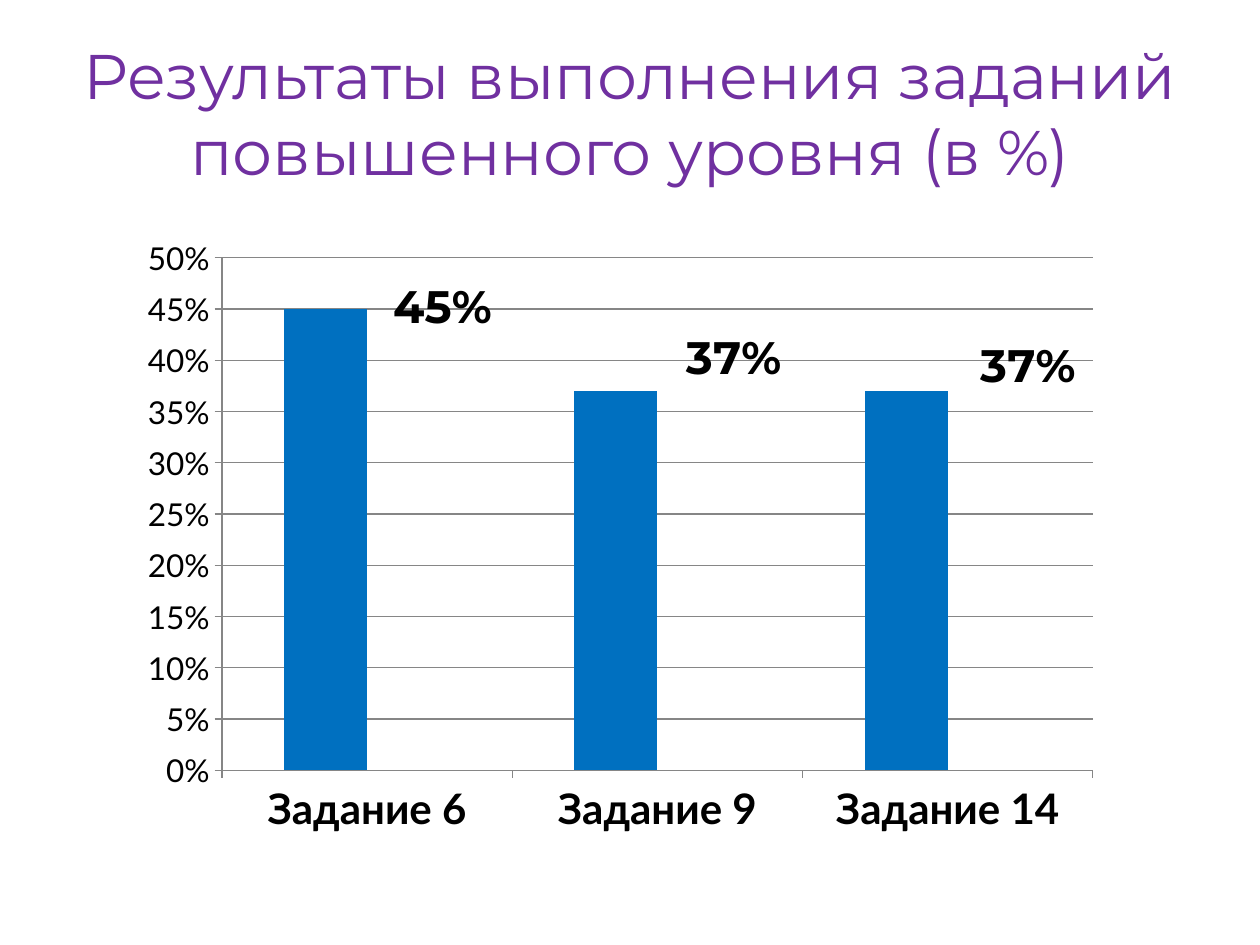
from typing import NamedTuple

from lxml import etree
from pptx import Presentation
from pptx.chart.data import CategoryChartData
from pptx.dml.color import RGBColor
from pptx.enum.chart import XL_CHART_TYPE, XL_LABEL_POSITION, XL_TICK_MARK
from pptx.enum.text import MSO_ANCHOR, PP_ALIGN
from pptx.oxml.ns import qn
from pptx.util import Inches, Pt

COLUMNS = XL_CHART_TYPE.COLUMN_CLUSTERED
OUTSIDE_END = XL_LABEL_POSITION.OUTSIDE_END
OUTSIDE = XL_TICK_MARK.OUTSIDE
MIDDLE = MSO_ANCHOR.MIDDLE
CENTER = PP_ALIGN.CENTER

PURPLE = RGBColor(0x70, 0x30, 0xA0)
BLUE = RGBColor(0x00, 0x70, 0xC0)
INDIGO = RGBColor(0x33, 0x33, 0xCC)
WHITE = RGBColor(0xFF, 0xFF, 0xFF)
GREY = RGBColor(0x86, 0x86, 0x86)
BLACK = RGBColor(0, 0, 0)
HEADING_FONT, CHART_FONT = "Montserrat", "Lato"

WIDTH, HEIGHT = Inches(10), Inches(7.5)


class Area(NamedTuple):
    """Place and size in percent of the slide."""
    left: float
    top: float
    width: float
    height: float

    def lengths(self) -> tuple[int, ...]:
        sides = (WIDTH, HEIGHT, WIDTH, HEIGHT)
        return tuple(round(share * side / 100) for share, side in zip(self, sides))


class Task(NamedTuple):
    """One task, its result and the shift of its label in percent of the chart."""
    name: str
    result: float
    shift_x: float
    shift_y: float


TITLE_AREA = Area(0, 3, 100, 17.8)
CHART_AREA = Area(10.2, 24, 78.1, 65.6)
TASKS = (
    Task("Задание 6", 0.45, 11.9, 5.1),
    Task("Задание 9", 0.37, 12, 0),
    Task("Задание 14", 0.37, 12.4, 1.3),
)


def style_font(font, name: str, size: int, color: RGBColor, bold: bool = False) -> None:
    font.name, font.size, font.bold = name, Pt(size), bold
    font.color.rgb = color


def make_layout(modes: dict[str, str], **percents: float):
    """Return a manual chart layout with lengths in percent of the chart."""
    layout = etree.Element(qn("c:layout"))
    manual = etree.SubElement(layout, qn("c:manualLayout"))
    shares = {tag: f"{percent / 100:.3f}" for tag, percent in percents.items()}
    for tag, value in (modes | shares).items():
        etree.SubElement(manual, qn(f"c:{tag}")).set("val", value)
    return layout


def add_title(page, text: str) -> None:
    box = page.shapes.add_textbox(*TITLE_AREA.lengths())
    frame = box.text_frame
    frame.word_wrap = True
    frame.vertical_anchor = MIDDLE
    para = frame.paragraphs[0]
    para.alignment = CENTER
    span = para.add_run()
    span.text = text
    style_font(span.font, HEADING_FONT, 36, PURPLE)


def style_axis(axis, size: int, bold: bool) -> None:
    style_font(axis.tick_labels.font, CHART_FONT, size, BLACK, bold)
    axis.major_tick_mark = OUTSIDE
    axis.format.line.color.rgb = GREY


def label_results(series) -> None:
    labels = series.data_labels
    labels.show_value = True
    labels.number_format, labels.number_format_is_linked = "0%", False
    style_font(labels.font, HEADING_FONT, 26, BLACK, True)
    for index in range(len(TASKS)):
        label = series.points[index].data_label
        style_font(label.font, HEADING_FONT, 26, BLACK, True)
        label.position = OUTSIDE_END
    # Move each label to the right of its column, without leader lines
    for task, node in zip(TASKS, series._element.iter(qn("c:dLbl"))):
        place = make_layout({}, x=task.shift_x, y=task.shift_y)
        node.find(qn("c:idx")).addnext(place)
    for leader in series._element.iter(qn("c:showLeaderLines")):
        leader.set("val", "0")


def add_results_chart(page) -> None:
    data = CategoryChartData(number_format="0%")
    data.categories = [task.name for task in TASKS]
    data.add_series("Series 1", [task.result for task in TASKS])
    data.add_series("Series 2", [None] * len(TASKS))
    data.add_series("Series 3", [])
    chart = page.shapes.add_chart(COLUMNS, *CHART_AREA.lengths(), data).chart
    chart.has_title = chart.has_legend = False
    style_font(chart.font, CHART_FONT, 18, BLACK)

    # Columns
    plot = chart.plots[0]
    plot.vary_by_categories = False
    plot.gap_width, plot.overlap = 150, 0
    for series, color in zip(plot.series, (BLUE, INDIGO, WHITE)):
        series.format.fill.solid()
        series.format.fill.fore_color.rgb = color
    label_results(plot.series[0])
    # The last series has no values, so it takes no room
    empty = plot.series[2]._element
    empty.remove(empty.find(qn("c:val")))

    # Axes
    style_axis(chart.category_axis, 24, True)
    scale = chart.value_axis
    style_axis(scale, 18, False)
    scale.minimum_scale, scale.maximum_scale, scale.major_unit = 0, 0.5, 0.05
    scale.tick_labels.number_format = "0%"
    scale.tick_labels.number_format_is_linked = False
    scale.has_major_gridlines = True
    scale.major_gridlines.format.line.color.rgb = GREY

    # Inner plot area
    plot_area = next(chart._chartSpace.iter(qn("c:plotArea")))
    for old in plot_area.findall(qn("c:layout")):
        plot_area.remove(old)
    modes = {"layoutTarget": "inner", "xMode": "edge", "yMode": "edge"}
    plot_area.insert(0, make_layout(modes, x=9.5, y=5, w=88.5, h=82.7))


def main() -> None:
    deck = Presentation()
    deck.slide_width, deck.slide_height = WIDTH, HEIGHT
    page = deck.slides.add_slide(deck.slide_layouts[6])
    add_title(page, "Результаты выполнения заданий повышенного уровня (в %)")
    add_results_chart(page)
    deck.save("out.pptx")


if __name__ == "__main__":
    main()
